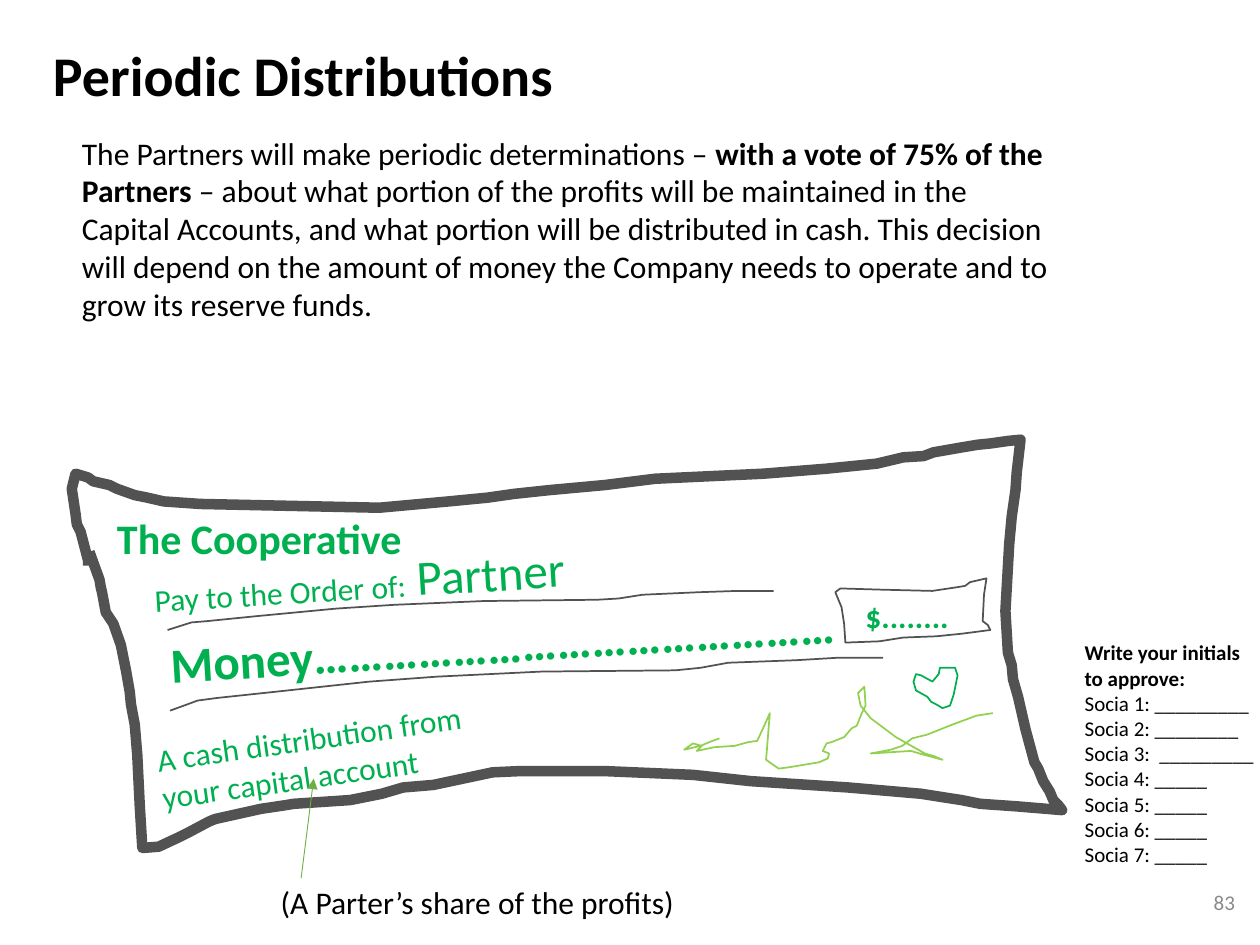
"""Build the Periodic Distributions slide with its hand-drawn cheque."""
from lxml.etree import SubElement
from pptx import Presentation
from pptx.dml.color import RGBColor
from pptx.enum.shapes import MSO_CONNECTOR
from pptx.enum.text import MSO_ANCHOR, MSO_AUTO_SIZE, PP_ALIGN
from pptx.oxml.ns import qn
from pptx.util import Inches, Pt

BLACK = RGBColor(0x00, 0x00, 0x00)
GRAY = RGBColor(0x89, 0x89, 0x89)
INK = RGBColor(0x52, 0x52, 0x52)
GREEN = RGBColor(0x00, 0xB0, 0x50)
LIME = RGBColor(0x92, 0xD0, 0x50)
LEAF = RGBColor(0x70, 0xAD, 0x47)

TITLE = [[("Periodic Distributions", 32, True)]]
DECISION = [[
    ("The Partners will make periodic determinations – ", 18, False),
    ("with a vote of 75% of the Partners ", 18, True),
    ("– about what portion of the profits will be maintained in the Capital "
     "Accounts, and what portion will be distributed in cash. This decision "
     "will depend on the amount of money the Company needs to operate and to "
     "grow its reserve funds.", 18, False),
]]
INITIALS = [[(heading, 12, True)] for heading in ("Write your initials", "to approve:")] + [
    [(line, 12, False)] for line in (
        "Socia 1: _________", "Socia 2: ________", "Socia 3:  _________",
        "Socia 4: _____", "Socia 5: _____", "Socia 6: _____", "Socia 7: _____")
]
LABELS = [
    ((8.51, 5.03, 2.45, 2.12), 0, BLACK, INITIALS),
    ((1.25, 4.82, 5.51, 0.57), -3.6, GREEN,
     [[("Money………………………………………", 28, True)]]),
    ((1.12, 4.26, 5.41, 0.57), -3.6, GREEN,
     [[("Pay to the Order of:", 18, False), (" Partner", 28, False)]]),
    ((0.83, 4.02, 3.11, 0.51), 0, GREEN, [[("The Cooperative", 24, True)]]),
    ((6.77, 4.69, 1.11, 0.42), 0, GREEN, [[("$........", 18, True)]]),
    ((1.15, 5.54, 4.3, 0.71), -8.1, GREEN,
     [[("A cash distribution from", 18, False)], [("your capital account", 18, False)]]),
    ((2.13, 6.96, 3.74, 0.4), 0, BLACK,
     [[("(A Parter’s share of the profits)", 18, False)]]),
]

UNITS_PER_INCH = 100
CHEQUE_EDGE = [
    (71, 438), (79, 460), (80, 466), (81, 470), (84, 486), (90, 495), (96, 512),
    (100, 532), (103, 549), (104, 559), (107, 575), (109, 599), (111, 640),
    (113, 673), (126, 672), (141, 665), (151, 660), (166, 652), (171, 650),
    (207, 642), (227, 639), (233, 638), (278, 635), (303, 630), (320, 625),
    (344, 623), (391, 613), (413, 612), (480, 612), (550, 615), (596, 620),
    (673, 625), (731, 630), (750, 633), (763, 635), (778, 638), (807, 640),
    (843, 643), (840, 639), (836, 635), (833, 628), (828, 620), (824, 610),
    (821, 605), (814, 579), (808, 553), (804, 539), (803, 528), (800, 518),
    (798, 485), (801, 432), (803, 410), (806, 389), (807, 375), (810, 349),
    (800, 350), (786, 352), (776, 353), (764, 355), (741, 359), (733, 362),
    (717, 363), (696, 368), (656, 372), (606, 376), (520, 380), (480, 385),
    (436, 389), (408, 392), (387, 395), (356, 398), (301, 403), (159, 400),
    (130, 398), (117, 395), (107, 393), (93, 388), (87, 385), (74, 382),
    (70, 379), (60, 376), (57, 388), (60, 408), (61, 416), (64, 422),
    (70, 445), (70, 449),
]
MONEY_RULE = [
    (135, 564), (157, 556), (172, 554), (219, 549), (293, 541), (347, 537),
    (430, 533), (536, 532), (556, 530), (578, 526), (632, 524), (665, 522), (701, 522),
]
PAYEE_RULE = [(133 + (x - 135) * 0.85, 469 + (y - 522) * 0.75) for x, y in MONEY_RULE]
SIGNATURE = [
    (571, 586), (563, 589), (556, 592), (543, 595), (550, 590), (557, 592),
    (553, 596), (567, 593), (583, 592), (594, 589), (601, 588), (607, 575),
    (611, 566), (608, 603), (618, 610), (626, 609), (650, 605), (657, 602),
    (658, 598), (653, 596), (656, 590), (660, 589), (670, 585), (676, 578),
    (680, 576), (684, 566), (687, 560), (686, 545), (681, 550), (683, 560),
    (691, 570), (711, 585), (734, 598), (741, 600), (748, 603), (737, 600),
    (733, 599), (723, 596), (691, 598), (707, 595), (716, 592), (724, 586),
    (736, 583), (756, 575), (775, 568), (788, 566),
]
AMOUNT_BOX = [
    (667, 467), (663, 470), (668, 482), (670, 495), (671, 510), (698, 509),
    (717, 506), (743, 505), (763, 503), (786, 500), (784, 496), (780, 493),
    (781, 472), (783, 459), (770, 462), (766, 465), (760, 466), (740, 469), (700, 468),
]
HEART = [
    (740, 541), (731, 536), (727, 535), (725, 541), (727, 548), (736, 553),
    (739, 557), (743, 559), (748, 562), (754, 560), (757, 551), (760, 536),
    (758, 530), (746, 530), (745, 535),
]
STROKES = [
    (CHEQUE_EDGE, INK, 6, False),
    (MONEY_RULE, INK, 1, False),
    (SIGNATURE, LIME, 1, False),
    (PAYEE_RULE, INK, 1, False),
    (AMOUNT_BOX, INK, 1, True),
    (HEART, GREEN, 1, True),
]


def place(shape, box):
    shape.left, shape.top, shape.width, shape.height = map(Inches, box)


def write(shape, paragraphs, color, align=PP_ALIGN.LEFT, anchor=MSO_ANCHOR.TOP):
    frame = shape.text_frame
    frame.word_wrap = True
    frame.auto_size = MSO_AUTO_SIZE.NONE
    frame.vertical_anchor = anchor
    for index, pieces in enumerate(paragraphs):
        paragraph = frame.add_paragraph() if index else frame.paragraphs[0]
        paragraph.alignment = align
        paragraph.space_before = Pt(0)
        for words, size, bold in pieces:
            run = paragraph.add_run()
            run.text = words
            run.font.name = "Calibri"
            run.font.size = Pt(size)
            run.font.bold = bold
            run.font.color.rgb = color


def draw_stroke(shapes, points, color, weight, closed):
    builder = shapes.build_freeform(*points[0], scale=Inches(1) / UNITS_PER_INCH)
    builder.add_line_segments(points[1:], close=closed)
    stroke = builder.convert_to_shape()
    stroke.shadow.inherit = False
    stroke.fill.background()
    stroke.line.color.rgb = color
    stroke.line.width = Pt(weight)


def draw_arrow(shapes, start, end):
    arrow = shapes.add_connector(MSO_CONNECTOR.STRAIGHT, *map(Inches, start + end))
    arrow.line.color.rgb = LEAF
    arrow.line.width = Pt(0.5)
    SubElement(arrow.line._get_or_add_ln(), qn("a:tailEnd"), type="triangle")
    SubElement(arrow._element.spPr, qn("a:effectLst"))


def main():
    deck = Presentation()
    deck.slide_width, deck.slide_height = Inches(10), Inches(7.5)
    slide = deck.slides.add_slide(deck.slide_layouts[1])
    shapes = slide.shapes

    title, decision = slide.placeholders
    place(title, (0.32, 0.27, 8.34, 0.64))
    write(title, TITLE, BLACK)
    place(decision, (0.55, 1.01, 7.97, 1.62))
    write(decision, DECISION, BLACK)
    properties = decision.text_frame.paragraphs[0]._p.get_or_add_pPr()
    properties.set("marL", "0")
    properties.set("indent", "0")
    SubElement(properties, qn("a:buNone"))

    for stroke in STROKES:
        draw_stroke(shapes, *stroke)
    for box, angle, color, paragraphs in LABELS:
        label = shapes.add_textbox(*map(Inches, box))
        label.rotation = angle
        write(label, paragraphs, color)
    draw_arrow(shapes, (2.39, 6.97), (2.49, 6.18))

    page_number = shapes.add_textbox(*map(Inches, (7.65, 6.96, 2.25, 0.4)))
    write(page_number, [[("83", 12, False)]], GRAY, PP_ALIGN.RIGHT, MSO_ANCHOR.MIDDLE)
    deck.save("out.pptx")


if __name__ == "__main__":
    main()
